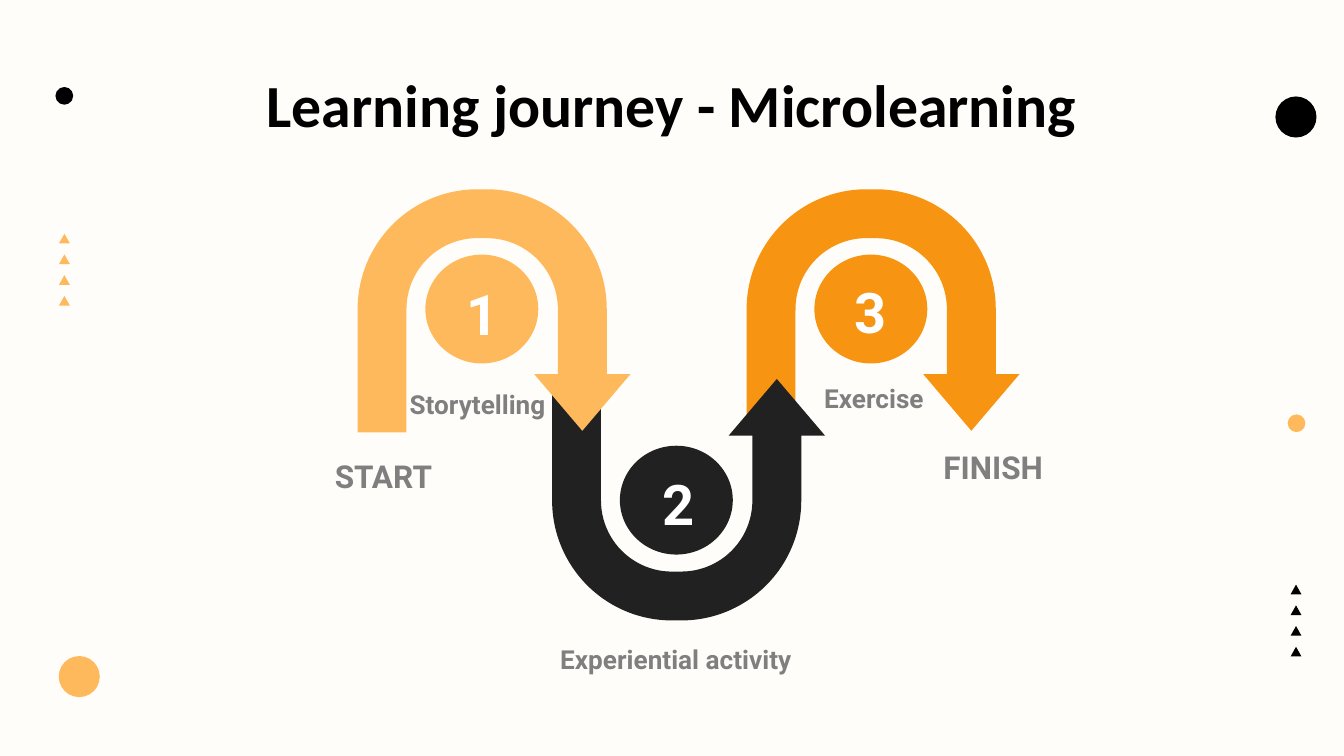
from pptx import Presentation
from pptx.dml.color import RGBColor
from pptx.enum import shapes, text
from pptx.util import Pt

BLACK, CHARCOAL, GREY, WHITE = "000000", "212121", "7F7F7F", "FFFFFF"
AMBER, ORANGE, CREAM = "FFB95D", "F79411", "FFFDF9"
SHAPE = shapes.MSO_SHAPE


def add_filled(kind, left, top, width, height, color):
    shape = page.shapes.add_shape(kind, Pt(left), Pt(top), Pt(width), Pt(height))
    shape.shadow.inherit = False
    shape.fill.solid()
    shape.fill.fore_color.rgb = RGBColor.from_string(color)
    shape.line.fill.background()
    return shape


def write(box, words, font, size, color):
    """Put one centred bold line into a box."""
    frame = box.text_frame
    frame.text = words
    para = frame.paragraphs[0]
    para.alignment = text.PP_ALIGN.CENTER
    para.line_spacing = 1.0
    span = para.runs[0]
    span.font.name = font
    span.font.size = Pt(size)
    span.font.bold = True
    span.font.color.rgb = RGBColor.from_string(color)


deck = Presentation()
deck.slide_width, deck.slide_height = Pt(720), Pt(405)
page = deck.slides.add_slide(deck.slide_layouts[5])
page.background.fill.solid()
page.background.fill.fore_color.rgb = RGBColor.from_string(CREAM)

# Dots and triangle columns along both edges
for left, top, size, color in [
    (31.5, 351.5, 22, AMBER),
    (689.8, 222, 9.5, AMBER),
    (29.7, 46.6, 9.5, BLACK),
    (683.3, 51.7, 22, BLACK),
]:
    add_filled(SHAPE.OVAL, left, top, size, size, color)

for left, first_top, color in [(31.6, 125.2, AMBER), (691.4, 313.2, BLACK)]:
    for step in range(4):
        add_filled(SHAPE.ISOSCELES_TRIANGLE, left, first_top + 11.1 * step, 5.8, 5.2, color)

title = page.shapes.title
title.left, title.top, title.width, title.height = Pt(24.5), Pt(29), Pt(671), Pt(45)
frame = title.text_frame
frame.margin_left = frame.margin_right = frame.margin_top = frame.margin_bottom = Pt(7.2)
frame.vertical_anchor = text.MSO_ANCHOR.TOP
frame.auto_size = text.MSO_AUTO_SIZE.NONE
write(title, "Learning journey - Microlearning", "Calibri", 32, BLACK)

# Three U-turns; each earlier stage overlaps the next one
turn_width, turn_height = 146.2, 130.3
circle_width, circle_height = 60.5, 58.3
for stage, color in [(3, ORANGE), (2, CHARCOAL), (1, AMBER)]:
    left = 191.6 + 104.2 * (stage - 1)
    upside_down = stage == 2
    top = 202.1 if upside_down else 101.4
    turn = add_filled(SHAPE.U_TURN_ARROW, left, top, turn_width, turn_height, color)
    for index, value in enumerate([0.201, 0.198, 0.233, 0.493, 0.993]):
        turn.adjustments[index] = value
    if upside_down:
        turn.rotation = 180
        turn._element.spPr.xfrm.set("flipH", "1")
    circle_top = top + (36.7 if upside_down else 35)
    add_filled(SHAPE.OVAL, left + 36.3, circle_top, circle_width, circle_height, color)

for words, left, top, width, height, size, color in [
    ("1", 241.9, 146.2, 33, 43.6, 30, WHITE),
    ("2", 347, 247.8, 33, 43.6, 30, WHITE),
    ("3", 450, 145.4, 33, 43.6, 30, WHITE),
    ("Exercise", 434, 201.2, 68.4, 24.2, 14, GREY),
    ("Storytelling", 210.2, 204.5, 91.4, 24.2, 14, GREY),
    ("Experiential activity", 292.3, 340.9, 139.7, 24.2, 14, GREY),
    ("FINISH", 496.8, 236.4, 70.6, 27.8, 16.9, GREY),
    ("START", 169.8, 241.2, 71.3, 27.8, 16.9, GREY),
]:
    label = page.shapes.add_textbox(Pt(left), Pt(top), Pt(width), Pt(height))
    write(label, words, "Roboto", size, color)

deck.save("out.pptx")
